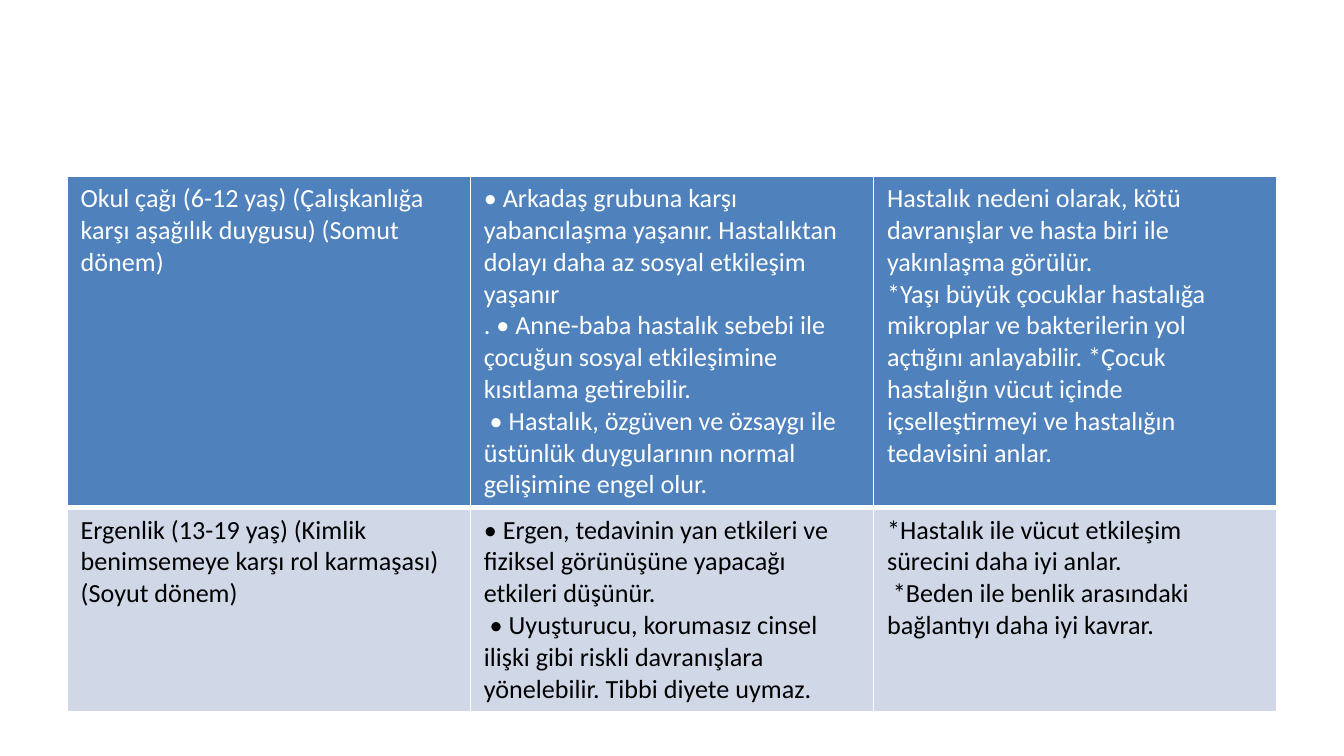
from lxml import etree
from pptx import Presentation
from pptx.dml.color import RGBColor
from pptx.oxml.ns import qn
from pptx.util import Inches, Pt

FONT = "Calibri"
SIZE = 14
EDGE = "FFFFFF"
ROWS = [
    {
        "height": 2.44, "fill": "4F81BD", "ink": "FFFFFF",
        "edges": {"lnL": 1, "lnR": 1, "lnT": 1, "lnB": 3},
        "cells": [
            ["Okul çağı (6-12 yaş) (Çalışkanlığa karşı aşağılık duygusu) (Somut dönem)"],
            ["• Arkadaş grubuna karşı yabancılaşma yaşanır. Hastalıktan dolayı daha az sosyal etkileşim yaşanır",
             ". • Anne-baba hastalık sebebi ile çocuğun sosyal etkileşimine kısıtlama getirebilir.",
             " • Hastalık, özgüven ve özsaygı ile üstünlük duygularının normal gelişimine engel olur."],
            ["Hastalık nedeni olarak, kötü davranışlar ve hasta biri ile yakınlaşma görülür.",
             "*Yaşı büyük çocuklar hastalığa mikroplar ve bakterilerin yol açtığını anlayabilir. "
             "*Çocuk hastalığın vücut içinde içselleştirmeyi ve hastalığın tedavisini anlar."],
        ],
    },
    {
        "height": 1.49, "fill": "D0D8E8", "ink": "000000",
        "edges": {"lnL": 1, "lnR": 1, "lnB": 1},
        "cells": [
            ["Ergenlik (13-19 yaş) (Kimlik benimsemeye karşı rol karmaşası) (Soyut dönem)"],
            ["• Ergen, tedavinin yan etkileri ve fiziksel görünüşüne yapacağı etkileri düşünür.",
             " • Uyuşturucu, korumasız cinsel ilişki gibi riskli davranışlara yönelebilir. Tibbi diyete uymaz."],
            ["*Hastalık ile vücut etkileşim sürecini daha iyi anlar.",
             " *Beden ile benlik arasındaki bağlantıyı daha iyi kavrar."],
        ],
    },
]


def paint(target, color):
    """Give a fill a solid colour from a hex string."""
    target.solid()
    target.fore_color.rgb = RGBColor.from_string(color)


def edge_cell(cell, edges):
    """Draw the cell borders, given as points by side."""
    props = cell._tc.get_or_add_tcPr()
    for spot, (side, width) in enumerate(edges.items()):
        line = etree.Element(qn(f"a:{side}"), w=str(Pt(width)))
        solid = etree.SubElement(line, qn("a:solidFill"))
        etree.SubElement(solid, qn("a:srgbClr"), val=EDGE)
        props.insert(spot, line)


def fill_cell(cell, lines, fill, ink):
    """Write one paragraph per line into a cell and colour it."""
    paint(cell.fill, fill)
    cell.text = "\n".join(lines)
    for para in cell.text_frame.paragraphs:
        para.font.name = FONT
        para.font.size = Pt(SIZE)
        para.font.bold = False
        paint(para.font.fill, ink)


def add_stages(slide):
    """Add the table of age stages."""
    height = sum(row["height"] for row in ROWS)
    table = slide.shapes.add_table(
        len(ROWS), len(ROWS[0]["cells"]),
        Inches(0.5), Inches(1.31), Inches(9), Inches(height)).table
    for line, row in zip(table.rows, ROWS):
        line.height = Inches(row["height"])
        for cell, lines in zip(line.cells, row["cells"]):
            fill_cell(cell, lines, row["fill"], row["ink"])
            edge_cell(cell, row["edges"])


def main():
    """Build the slide and save it."""
    deck = Presentation()
    deck.slide_width = Inches(10)
    deck.slide_height = deck.slide_width * 9 // 16
    add_stages(deck.slides.add_slide(deck.slide_layouts[6]))
    deck.save("out.pptx")


if __name__ == "__main__":
    main()
